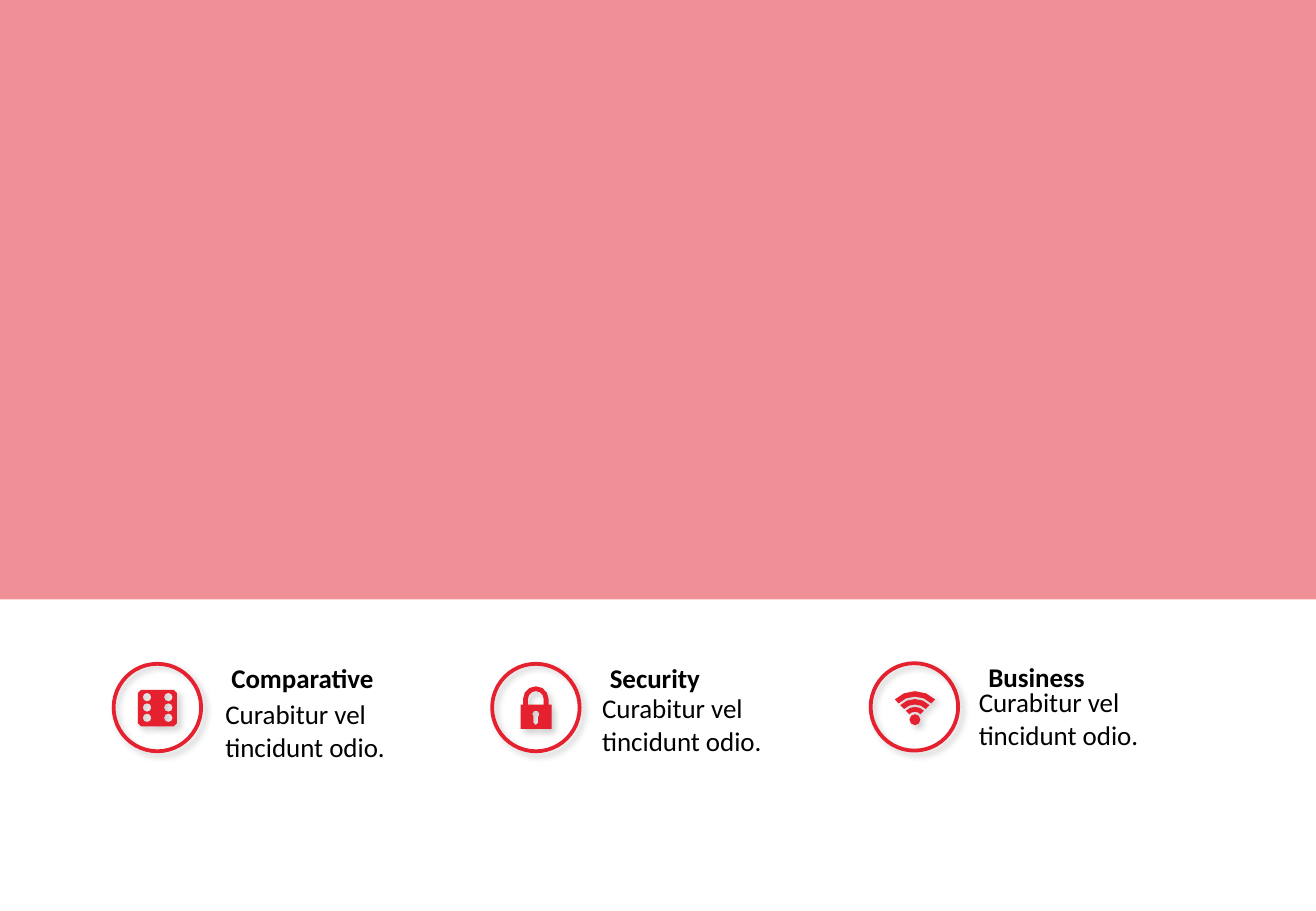
from dataclasses import dataclass
from math import cos, radians, sin

from lxml.etree import SubElement
from pptx import Presentation
from pptx.dml.color import RGBColor
from pptx.enum.shapes import MSO_SHAPE
from pptx.enum.text import MSO_ANCHOR, MSO_AUTO_SIZE, PP_ALIGN
from pptx.oxml.ns import qn
from pptx.util import Emu, Pt


@dataclass(frozen=True)
class Theme:
    red: str = "E5202F"
    ink: str = "000000"
    font: str = "Calibri"
    size: int = 16
    ring: float = 2.25


THEME = Theme()
SCALE = 4572


def px(n):
    return Emu(round(n * SCALE))


def rgb(code):
    return RGBColor.from_string(code)


def add_alpha(color, percent):
    SubElement(color, qn("a:alpha"), val=str(percent * 1000))


def add_shadow(shape):
    shape.shadow.inherit = False
    effects = shape.element.spPr.find(qn("a:effectLst"))
    outer = SubElement(
        effects, qn("a:outerShdw"), blurRad=str(Pt(4)), dist=str(Pt(3)),
        dir=str(45 * 60000), algn="tl", rotWithShape="0",
    )
    add_alpha(SubElement(outer, qn("a:srgbClr"), val=THEME.ink), 20)


def add_banner(slide, width, height):
    banner = slide.shapes.add_shape(MSO_SHAPE.RECTANGLE, 0, 0, px(width), px(height))
    banner.shadow.inherit = False
    banner.fill.solid()
    banner.fill.fore_color.rgb = rgb(THEME.red)
    banner.line.fill.background()
    add_alpha(banner.element.spPr.find(qn("a:solidFill"))[0], 50)


def add_ring(slide, left, top, size):
    ring = slide.shapes.add_shape(MSO_SHAPE.OVAL, px(left), px(top), px(size), px(size))
    ring.fill.background()
    ring.line.color.rgb = rgb(THEME.red)
    ring.line.width = Pt(THEME.ring)
    add_shadow(ring)


def add_text(slide, box, text, bold=False, wrap=False, inset=(20, 10)):
    frame = slide.shapes.add_textbox(*map(px, box)).text_frame
    frame.word_wrap = wrap
    frame.auto_size = MSO_AUTO_SIZE.SHAPE_TO_FIT_TEXT
    frame.vertical_anchor = MSO_ANCHOR.TOP
    frame.margin_left = frame.margin_right = px(inset[0])
    frame.margin_top = frame.margin_bottom = px(inset[1])
    line = frame.paragraphs[0]
    line.alignment = PP_ALIGN.LEFT
    run = line.add_run()
    run.text = text
    run.font.name = THEME.font
    run.font.size = Pt(THEME.size)
    run.font.bold = bold
    run.font.color.rgb = rgb(THEME.ink)


def arc(x, y, r, start, end, steps):
    angles = [radians(start + (end - start) * i / steps) for i in range(steps + 1)]
    return [(x + r * cos(a), y + r * sin(a)) for a in angles]


def disc(x, y, r):
    return arc(x, y, r, 0, 315, 7)


def dice():
    left, top, right, base, r = 227, 1136, 291, 1196, 5
    body = (
        arc(left + r, top + r, r, 180, 270, 1)
        + arc(right - r, top + r, r, 270, 360, 1)
        + arc(right - r, base - r, r, 0, 90, 1)
        + arc(left + r, base - r, r, 90, 180, 1)
    )
    pips = [disc(x, y, 7) for x in (242, 277) for y in (1148, 1165, 1182)]
    return [body, *pips]


def lock():
    mid, bend, top, base = 882, 1151, 1160, 1200
    body = [
        (857, base), (857, top), (mid - 21, top),
        *arc(mid, bend, 21, 180, 360, 6),
        (mid + 21, top), (908, top), (908, base),
    ]
    gap = [(mid - 13, top), *arc(mid, bend, 13, 180, 360, 6), (mid + 13, top)]
    key = arc(mid, 1176, 6, 130, 410, 5) + arc(mid, 1190, 4, 0, 180, 2)
    return [body, gap, key]


def signal():
    x, y = 1506, 1185
    waves = [
        arc(x, y, outer, 225, 315, 4) + arc(x, y, inner, 315, 225, 4)
        for outer, inner in ((47, 38), (34, 25), (21, 13))
    ]
    return [disc(x, y, 9), *waves]


def add_icon(slide, loops):
    loops = [[(px(x), px(y)) for x, y in loop] for loop in loops]
    first, *others = loops
    pen = slide.shapes.build_freeform(*first[0])
    pen.add_line_segments(first[1:], close=True)
    for loop in others:
        pen.move_to(*loop[0])
        pen.add_line_segments(loop[1:], close=True)
    icon = pen.convert_to_shape()
    icon.fill.solid()
    icon.fill.fore_color.rgb = rgb(THEME.red)
    icon.line.fill.background()
    add_shadow(icon)


def main():
    deck = Presentation()
    deck.slide_width, deck.slide_height = px(2166), px(1500)
    slide = deck.slides.add_slide(deck.slide_layouts[6])
    add_banner(slide, 2166, 987)
    items = [
        ("Comparative", 278, 1093, dice),
        ("Security", 192, 1093, lock),
        ("Business", 200, 1092, signal),
    ]
    for i, (title, width, top, icon) in enumerate(items):
        left = 187 + 623 * i
        add_text(slide, (left + 174, top - 14, width, 74), title, bold=True)
        add_text(
            slide, (361 + 620 * i, 1143 - 10 * i, 414, 118),
            "Curabitur vel tincidunt odio.", wrap=True, inset=(10, 6),
        )
        add_ring(slide, left, top, 144)
        add_icon(slide, icon())
    deck.save("out.pptx")


if __name__ == "__main__":
    main()
